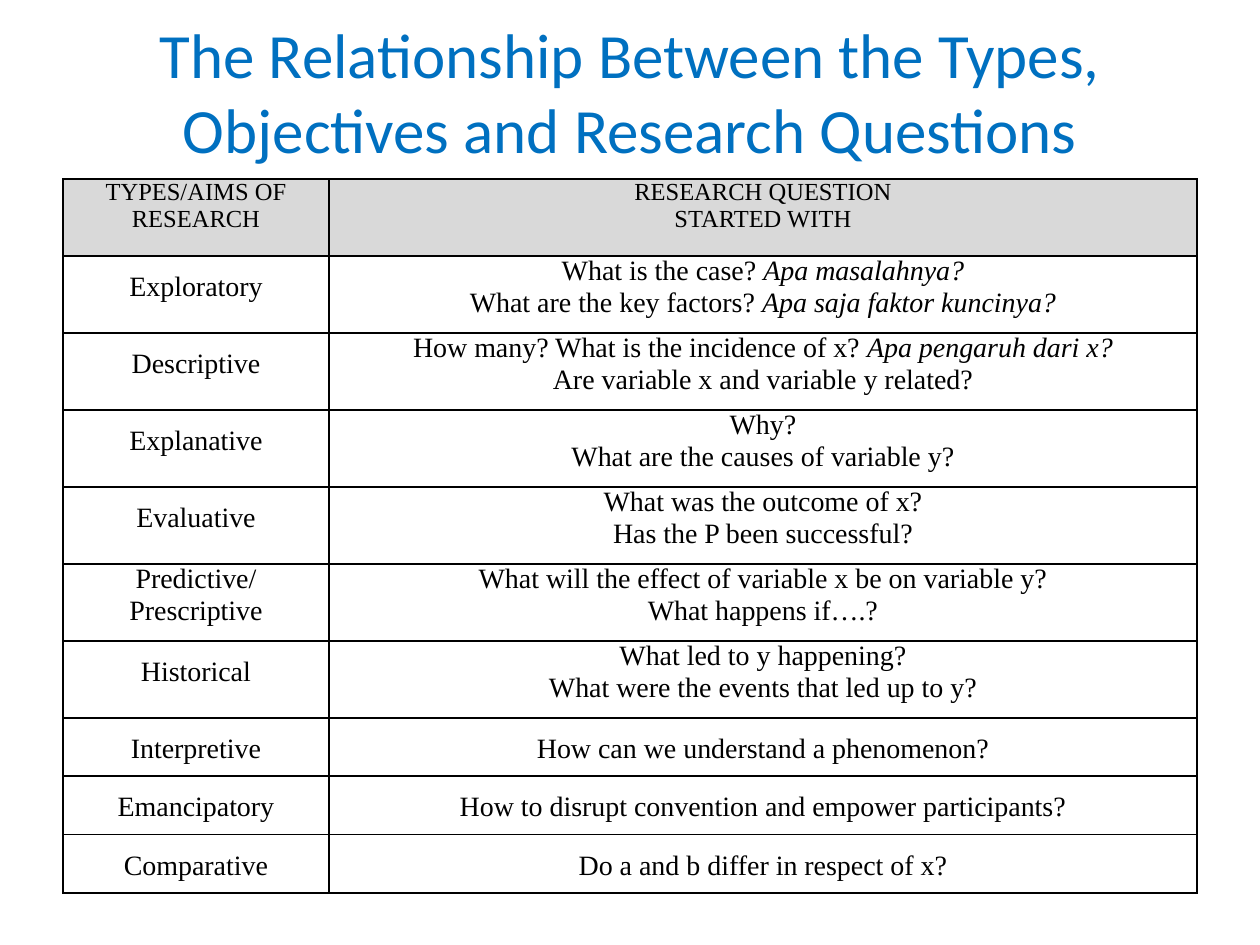
from lxml.etree import SubElement
from pptx import Presentation
from pptx.dml.color import RGBColor
from pptx.enum.text import MSO_ANCHOR as Anchor, PP_ALIGN as Align
from pptx.oxml.ns import qn
from pptx.util import Pt

EMU_PER_PX = 914400 / 126
COLORS = {"title": "0070C0", "text": "000000", "border": "000000",
          "header": "D9D9D9", "body": "FFFFFF"}
TITLE = "The Relationship Between the Types, Objectives and Research Questions"

# Each cell is a list of lines; each line is (plain text, italic text)
HEADER = ([("TYPES/AIMS OF RESEARCH", "")],
          [("RESEARCH QUESTION", ""), ("STARTED WITH", "")])
BODY = [
    ([("Exploratory", "")],
     [("What is the case? ", "Apa masalahnya?"),
      ("What are the key factors? ", "Apa saja faktor kuncinya?")]),
    ([("Descriptive", "")],
     [("How many? What is the incidence of x? ", "Apa pengaruh dari x?"),
      ("Are variable x and variable y related?", "")]),
    ([("Explanative", "")],
     [("Why?", ""), ("What are the causes of variable y?", "")]),
    ([("Evaluative", "")],
     [("What was the outcome of x?", ""), ("Has the P been successful?", "")]),
    ([("Predictive/", ""), ("Prescriptive", "")],
     [("What will the effect of variable x be on variable y?", ""),
      ("What happens if….?", "")]),
    ([("Historical", "")],
     [("What led to y happening?", ""),
      ("What were the events that led up to y?", "")]),
    ([("Interpretive", "")], [("How can we understand a phenomenon?", "")]),
    ([("Emancipatory", "")],
     [("How to disrupt convention and empower participants?", "")]),
    ([("Comparative", "")], [("Do a and b differ in respect of x?", "")]),
]


def px(length):
    return round(length * EMU_PER_PX)


def add_run(paragraph, text, font_name, size, color, italic=False):
    run = paragraph.add_run()
    run.text = text
    run.font.name = font_name
    run.font.size = Pt(size)
    run.font.italic = italic
    run.font.color.rgb = RGBColor.from_string(COLORS[color])


def set_borders(cell):
    properties = cell._tc.get_or_add_tcPr()
    for position, side in enumerate(("lnL", "lnR", "lnT", "lnB")):
        line = SubElement(properties, qn(f"a:{side}"), w=str(Pt(1)))
        fill = SubElement(line, qn("a:solidFill"))
        SubElement(fill, qn("a:srgbClr"), val=COLORS["border"])
        properties.insert(position, line)  # borders come before the fill


def fill_cell(cell, lines, size, color, single_line_spacing):
    cell.margin_left = cell.margin_right = px(9)
    cell.margin_top = cell.margin_bottom = 0
    cell.vertical_anchor = Anchor.TOP
    cell.fill.solid()
    cell.fill.fore_color.rgb = RGBColor.from_string(COLORS[color])
    set_borders(cell)
    frame = cell.text_frame
    for index, (plain, italic) in enumerate(lines):
        paragraph = frame.add_paragraph() if index else frame.paragraphs[0]
        paragraph.alignment = Align.CENTER
        if len(lines) == 1:
            paragraph.line_spacing = single_line_spacing
        add_run(paragraph, plain, "Times New Roman", size, "text")
        if italic:
            add_run(paragraph, italic, "Times New Roman", size, "text", True)


def place_title(slide, left, top, width, height):
    title = slide.shapes.title
    title.left, title.top = px(left), px(top)
    title.width, title.height = px(width), px(height)
    frame = title.text_frame
    frame.word_wrap = True
    frame.vertical_anchor = Anchor.MIDDLE
    paragraph = frame.paragraphs[0]
    paragraph.alignment = Align.CENTER
    add_run(paragraph, TITLE, "Calibri", 36, "title")


def place_question_table(slide, left, top, width, height):
    rows = [HEADER] + BODY
    table = slide.shapes.add_table(len(rows), 2, px(left), px(top),
                                   px(width), px(height)).table
    type_width = 266
    table.columns[0].width = px(type_width)
    table.columns[1].width = px(width - type_width)

    # Rows with a one-line question share what the taller rows leave
    tall = 77
    short_count = sum(len(question) == 1 for _, question in rows)
    short = (height - tall * (len(rows) - short_count)) / short_count
    for index, row in enumerate(rows):
        table.rows[index].height = px(short if len(row[1]) == 1 else tall)
        style = (16, "body", 1.5) if index else (14, "header", 1.0)
        for column, lines in enumerate(row):
            fill_cell(table.cell(index, column), lines, *style)


def main():
    presentation = Presentation()
    presentation.slide_width, presentation.slide_height = px(1260), px(945)
    slide = presentation.slides.add_slide(presentation.slide_layouts[5])
    place_title(slide, 63, 38, 1134, 106)
    place_question_table(slide, 63, 179, 1134, 714)
    presentation.save("out.pptx")


if __name__ == "__main__":
    main()
